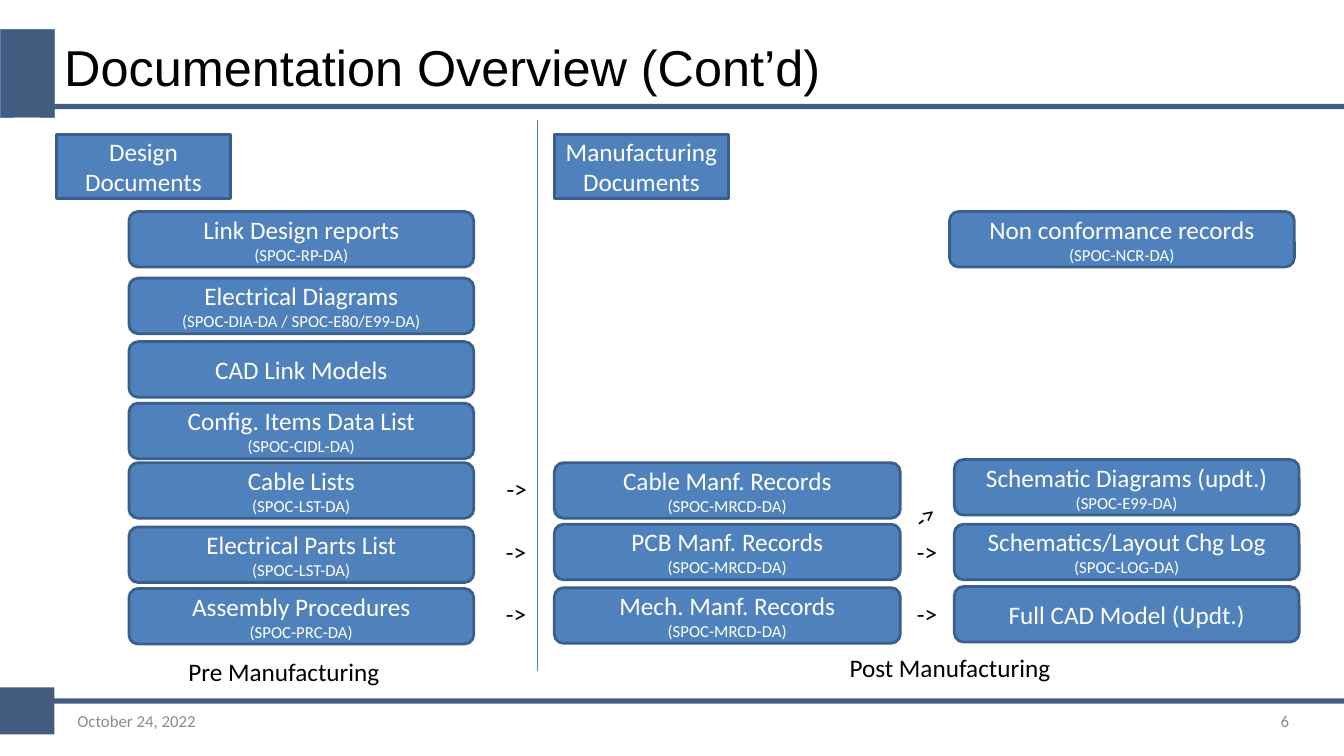
from pptx import Presentation
from pptx.dml.color import RGBColor
from pptx.enum.shapes import MSO_CONNECTOR as CONN, MSO_SHAPE as SHAPE
from pptx.enum.text import MSO_ANCHOR as ANCHOR, MSO_AUTO_SIZE as AUTO, PP_ALIGN as ALIGN
from pptx.oxml.ns import qn
from pptx.util import Cm, Pt

WHITE = RGBColor(0xFF, 0xFF, 0xFF)
BLACK = RGBColor(0x00, 0x00, 0x00)
GREY = RGBColor(0x8C, 0x8C, 0x8C)
NAVY = RGBColor(0x42, 0x5B, 0x7E)
BLUE = RGBColor(0x4F, 0x81, 0xBD)
EDGE = RGBColor(0x3A, 0x5F, 0x8C)
DIVIDER = RGBColor(0x4B, 0x7E, 0xBC)

SLIDE_W, SLIDE_H = 33.87, 19.05
BOX_W, BOX_H = 8.69, 1.4

# Lengths below are centimetres; boxes are (top, title, code) within a region
DESIGN_BOXES = [
    (1.93, "Link Design reports", "(SPOC-RP-DA)"),
    (3.61, "Electrical Diagrams", "(SPOC-DIA-DA / SPOC-E80/E99-DA)"),
    (5.21, "CAD Link Models", None),
    (6.76, "Config. Items Data List", "(SPOC-CIDL-DA)"),
    (8.26, "Cable Lists", "(SPOC-LST-DA)"),
    (9.88, "Electrical Parts List", "(SPOC-LST-DA)"),
    (11.43, "Assembly Procedures", "(SPOC-PRC-DA)"),
]
RECORD_BOXES = [
    (8.26, "Cable Manf. Records", "(SPOC-MRCD-DA)"),
    (9.81, "PCB Manf. Records", "(SPOC-MRCD-DA)"),
    (11.41, "Mech. Manf. Records", "(SPOC-MRCD-DA)"),
]
UPDATE_BOXES = [
    (8.18, "Schematic Diagrams (updt.)", "(SPOC-E99-DA)"),
    (9.81, "Schematics/Layout Chg Log", "(SPOC-LOG-DA)"),
    (11.38, "Full CAD Model (Updt.)", None),
]
NCR_BOXES = [(1.93, "Non conformance records", "(SPOC-NCR-DA)")]


def add_run(p, text, size, color, font="Calibri"):
    r = p.add_run()
    r.text = text
    r.font.size = Pt(size)
    r.font.name = font
    r.font.color.rgb = color


def add_block(s, kind, x, y, w, h, fill, edge=None, edge_pt=2):
    sp = s.shapes.add_shape(kind, Cm(x), Cm(y), Cm(w), Cm(h))
    sp.shadow.inherit = False
    sp.fill.solid()
    sp.fill.fore_color.rgb = fill
    if edge is None:
        sp.line.fill.background()
    else:
        sp.line.color.rgb = edge
        sp.line.width = Pt(edge_pt)
    return sp


def add_text(s, x, y, w, h, text, size, color, font="Calibri", align=ALIGN.LEFT):
    """Text centred vertically in a fixed box."""
    tf = s.shapes.add_textbox(Cm(x), Cm(y), Cm(w), Cm(h)).text_frame
    tf.word_wrap = True
    tf.vertical_anchor = ANCHOR.MIDDLE
    p = tf.paragraphs[0]
    p.alignment = align
    add_run(p, text, size, color, font)


def add_label(s, x, y, w, text, rotation=0):
    """Unwrapped caption or arrow sign."""
    sp = s.shapes.add_textbox(Cm(x), Cm(y), Cm(w), Cm(1.02))
    sp.rotation = rotation
    tf = sp.text_frame
    tf.word_wrap = False
    tf.auto_size = AUTO.SHAPE_TO_FIT_TEXT
    add_run(tf.paragraphs[0], text, 18, BLACK)


def add_box(s, kind, x, y, w, h, title, code=None):
    tf = add_block(s, kind, x, y, w, h, BLUE, EDGE).text_frame
    tf.word_wrap = True
    tf.vertical_anchor = ANCHOR.MIDDLE
    p = tf.paragraphs[0]
    p.alignment = ALIGN.CENTER
    add_run(p, title, 18, WHITE)
    if code:
        p = tf.add_paragraph()
        p.alignment = ALIGN.CENTER
        add_run(p, code, 12, WHITE)


def add_heading(s, x, y, text):
    add_box(s, SHAPE.FLOWCHART_PROCESS, x, y, 4.39, 1.6, text)


def add_column(s, x, y, boxes, w=BOX_W):
    for top, title, code in boxes:
        add_box(s, SHAPE.FLOWCHART_ALTERNATE_PROCESS, x, y + top, w, BOX_H, title, code)


def add_arrows(s, x, y, arrows):
    for dx, dy, rotation in arrows:
        add_label(s, x + dx, y + dy, 1.17, "->", rotation)


def header(s, x, y, w):
    add_block(s, SHAPE.RECTANGLE, x, y, 1.37, 2.21, NAVY, BLUE, 0.5)
    add_block(s, SHAPE.RECTANGLE, x + 0.94, y + 1.88, w - 0.94, 0.13, NAVY)
    add_text(s, x + 1.37, y + 0.02, 26.16, 1.85, "Documentation Overview (Cont’d)",
             36, BLACK, "Arial")


def footer(s, x, y, w):
    add_block(s, SHAPE.RECTANGLE, x, y, 1.37, 1.19, NAVY)
    add_block(s, SHAPE.RECTANGLE, x + 0.94, y + 0.28, w - 0.94, 0.13, NAVY)
    add_text(s, x + 1.7, y + 0.33, 7.9, 1.02, "October 24, 2022", 12, GREY)
    add_text(s, x + w - 9.03, y + 0.33, 7.9, 1.02, "6", 12, GREY, align=ALIGN.RIGHT)


def divider(s, x, y, h):
    line = s.shapes.add_connector(CONN.STRAIGHT, Cm(x), Cm(y), Cm(x), Cm(y + h))
    line.line.color.rgb = DIVIDER
    line.line.width = Pt(0.75)
    sp_pr = line._element.spPr
    sp_pr.append(sp_pr.makeelement(qn("a:effectLst"), {}))


def design_region(s, x, y):
    add_heading(s, x, y, "Design Documents")
    add_column(s, x + 1.83, y, DESIGN_BOXES)
    add_arrows(s, x, y, [(11.1, 8.39, 0), (11.08, 9.99, 0), (11.08, 11.56, 0)])
    add_label(s, x + 3.08, y + 13.01, 5.38, "Pre Manufacturing")


def manufacturing_region(s, x, y):
    add_heading(s, x, y, "Manufacturing Documents")
    add_column(s, x, y, RECORD_BOXES, 8.72)
    add_column(s, x + 10.08, y, UPDATE_BOXES)
    add_column(s, x + 9.96, y, NCR_BOXES)
    add_arrows(s, x, y, [(8.81, 9.05, 322.2), (8.89, 9.99, 0), (8.89, 11.54, 0)])
    add_label(s, x + 7.19, y + 12.91, 5.64, "Post Manufacturing")


def main():
    prs = Presentation()
    prs.slide_width, prs.slide_height = Cm(SLIDE_W), Cm(SLIDE_H)
    s = prs.slides.add_slide(prs.slide_layouts[6])
    header(s, 0, 0.74, SLIDE_W)
    footer(s, 0, 17.32, SLIDE_W)
    divider(s, 13.54, 3.02, 13.9)
    design_region(s, 1.42, 3.4)
    manufacturing_region(s, 13.97, 3.4)
    prs.save("out.pptx")


if __name__ == "__main__":
    main()
